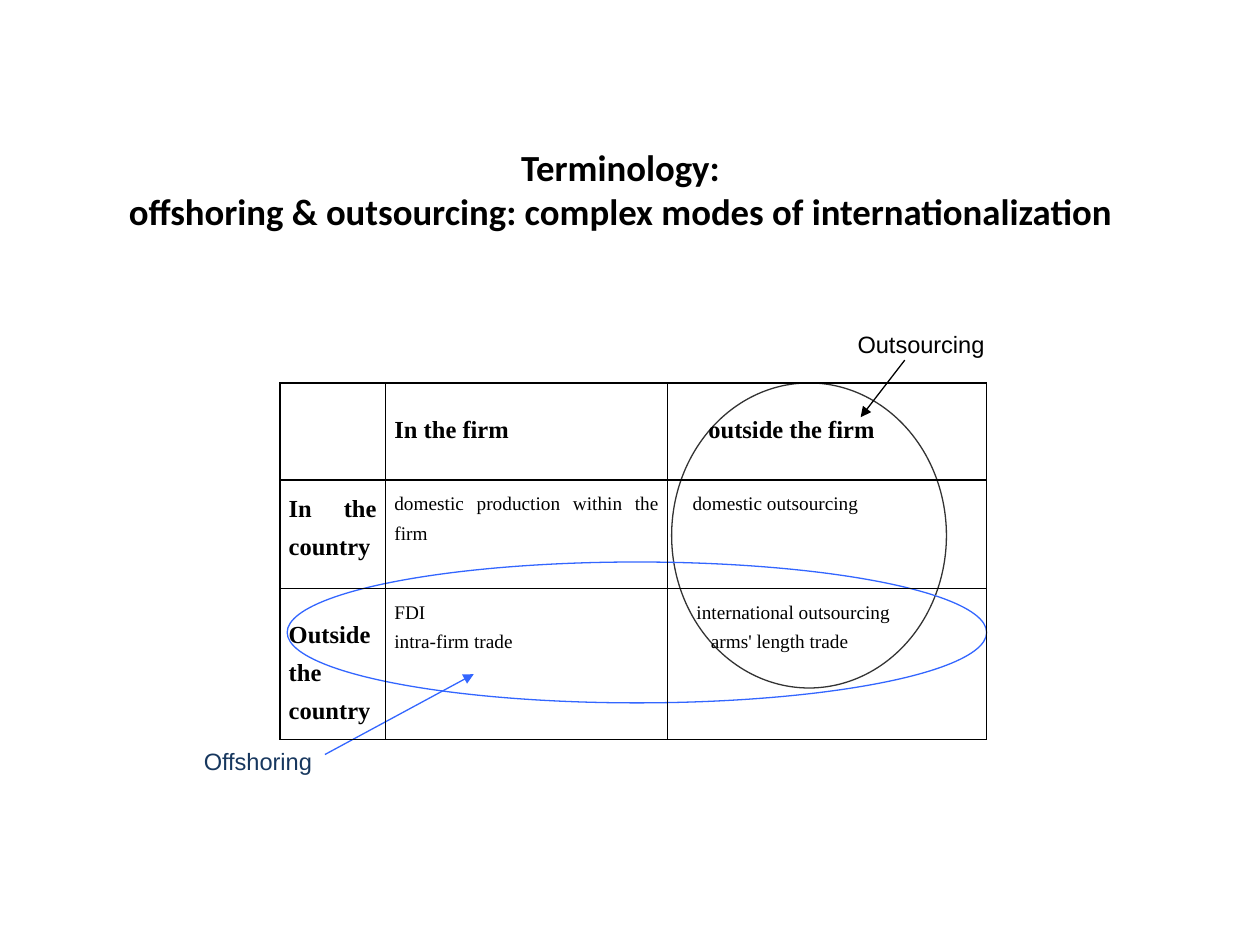
from pptx import Presentation
from pptx.dml.color import RGBColor
from pptx.enum.shapes import MSO_CONNECTOR, MSO_SHAPE
from pptx.enum.text import MSO_ANCHOR, PP_ALIGN
from pptx.oxml import parse_xml
from pptx.oxml.ns import nsdecls
from pptx.util import Cm, Pt

COLS = [2.13, 5.69, 6.43]
ROWS = [1.96, 2.18, 2.84]
HEADING = {"size": Pt(14), "bold": True, "name": "Times New Roman"}
BODY = {"size": Pt(11), "bold": False, "name": "Times New Roman"}
TITLE = {"size": Pt(21), "bold": True, "name": "Calibri"}
LABEL = {"size": Pt(13.5), "bold": False, "name": "Arial"}
HIGH, LOW = 0.1, 0.46
CELLS = {
    (0, 1): (HEADING, LOW, [("In the firm", 0)]),
    (0, 2): (HEADING, LOW, [("outside the firm", 0.64)]),
    (1, 0): (HEADING, HIGH, [("In the country", 0)]),
    (1, 1): (BODY, HIGH, [("domestic production within the firm", 0)]),
    (1, 2): (BODY, HIGH, [("domestic outsourcing", 0.32)]),
    (2, 0): (HEADING, LOW, [("Outside the country", 0)]),
    (2, 1): (BODY, HIGH, [("FDI", 0), ("intra-firm trade", 0)]),
    (2, 2): (BODY, HIGH, [("international outsourcing", 0.4),
                          ("arms' length trade", 0.69)]),
}
CALLOUTS = [
    {"text": "Outsourcing", "ink": "000000", "ring_ink": "333333", "arrow_ink": "000000",
     "ring": (7.9, 0, 5.54, 6.15), "label": (11.4, -1.19, 3.45, 0.71),
     "arrow": (12.6, -0.46, 11.71, 0.69)},
    {"text": "Offshoring", "ink": "17375E", "ring_ink": "3366FF", "arrow_ink": "3366FF",
     "ring": (0.15, 3.61, 14.1, 2.84), "label": (-1.78, 7.22, 2.84, 0.61),
     "arrow": (0.91, 7.49, 3.91, 5.87)},
]


def rgb(value):
    return RGBColor.from_string(value)


def set_all(obj, values):
    for name, value in values.items():
        setattr(obj, name, value)


def write(p, text, font, ink, align):
    p.alignment = align
    p.text = text
    for r in p.runs:
        set_all(r.font, font)
        r.font.color.rgb = rgb(ink)


def add_text(s, box, text, font, ink, align, anchor):
    tf = s.shapes.add_textbox(*map(Cm, box)).text_frame
    set_all(tf, {"word_wrap": True, "vertical_anchor": anchor})
    write(tf.paragraphs[0], text, font, ink, align)


def add_borders(cell):
    tcPr = cell._tc.get_or_add_tcPr()
    for i, side in enumerate("LRTB"):
        tcPr.insert(i, parse_xml(
            f'<a:ln{side} {nsdecls("a")} w="12700"><a:solidFill>'
            f'<a:srgbClr val="000000"/></a:solidFill></a:ln{side}>'))


def add_modes_table(s, left, top):
    table = s.shapes.add_table(len(ROWS), len(COLS), Cm(left), Cm(top),
                               Cm(sum(COLS)), Cm(sum(ROWS))).table
    set_all(table, {"first_row": False, "horz_banding": False})
    for col, width in zip(table.columns, COLS):
        col.width = Cm(width)
    for row, height in zip(table.rows, ROWS):
        row.height = Cm(height)
    for cell in table.iter_cells():
        cell.fill.background()
        add_borders(cell)
    for (row, col), (font, margin_top, lines) in CELLS.items():
        cell = table.cell(row, col)
        set_all(cell, {"margin_left": Cm(0.18), "margin_right": Cm(0.18),
                       "margin_top": Cm(margin_top), "margin_bottom": Cm(0.1)})
        tf = cell.text_frame
        for i, (text, indent) in enumerate(lines):
            p = tf.add_paragraph() if i else tf.paragraphs[0]
            write(p, text, font, "000000", PP_ALIGN.JUSTIFY)
            p.line_spacing = 1.4
            if indent:
                p._p.get_or_add_pPr().set("marL", str(Cm(indent)))


def add_callout(s, left, top, text, ink, ring_ink, arrow_ink, ring, label, arrow):
    x, y, width, height = ring
    sp = s.shapes.add_shape(MSO_SHAPE.OVAL, Cm(left + x), Cm(top + y), Cm(width), Cm(height))
    sp.shadow.inherit = False
    sp.fill.background()
    x1, y1, x2, y2 = arrow
    line = s.shapes.add_connector(MSO_CONNECTOR.STRAIGHT, Cm(left + x1), Cm(top + y1),
                                  Cm(left + x2), Cm(top + y2))
    for shape, color in ((sp, ring_ink), (line, arrow_ink)):
        shape.line.color.rgb = rgb(color)
        shape.line.width = Pt(0.75)
    line.line._get_or_add_ln().append(parse_xml(f'<a:tailEnd {nsdecls("a")} type="triangle"/>'))
    line._element.spPr.append(parse_xml(f'<a:effectLst {nsdecls("a")}/>'))
    x, y, width, height = label
    add_text(s, (left + x, top + y, width, height), text, LABEL, ink,
             PP_ALIGN.JUSTIFY, MSO_ANCHOR.TOP)


def main():
    prs = Presentation()
    set_all(prs, {"slide_width": Cm(25.4), "slide_height": Cm(19.05)})
    s = prs.slides.add_slide(prs.slide_layouts[6])
    add_text(s, (0, 2.59, 25.02, 2.44),
             "Terminology:\voffshoring & outsourcing: complex modes of internationalization",
             TITLE, "000000", PP_ALIGN.CENTER, MSO_ANCHOR.MIDDLE)
    left, top = 5.64, 7.72
    for callout in CALLOUTS:
        add_callout(s, left, top, **callout)
    add_modes_table(s, left, top)
    prs.save("out.pptx")


if __name__ == "__main__":
    main()
